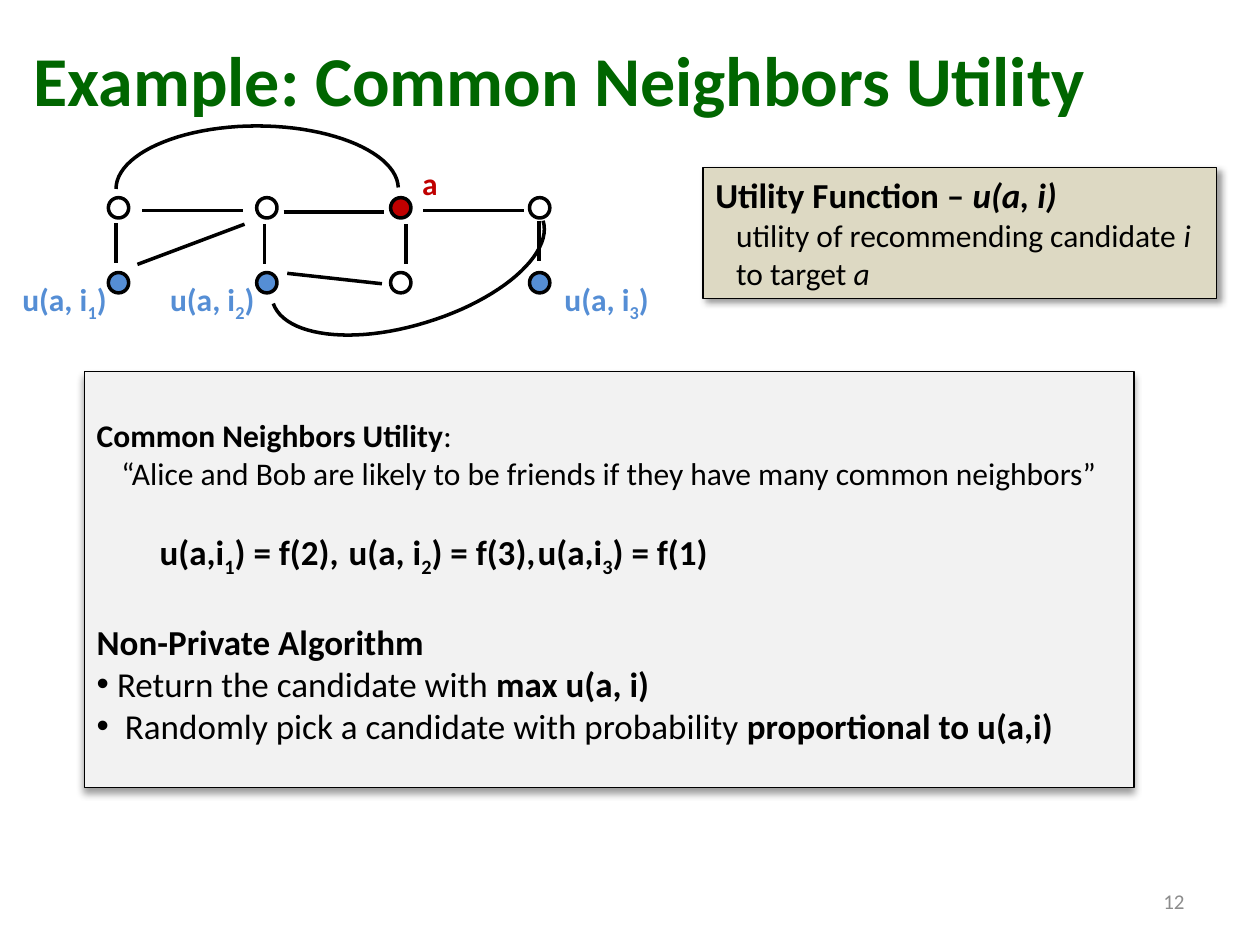
from dataclasses import dataclass

from lxml.etree import SubElement
from pptx import Presentation
from pptx.dml.color import RGBColor as RGB
from pptx.enum.shapes import MSO_CONNECTOR as CONNECTOR, MSO_SHAPE as SHAPE
from pptx.enum.text import MSO_ANCHOR as ANCHOR, PP_ALIGN as ALIGN
from pptx.oxml.ns import qn
from pptx.util import Cm, Pt


@dataclass(frozen=True)
class Theme:
    font: str = "Calibri"
    ink: str = "000000"
    title: str = "006600"
    target: str = "C00000"
    candidate: str = "558ED5"
    muted: str = "8C8C8C"
    tan: str = "DDD9C3"
    grey: str = "F2F2F2"
    title_size: int = 40
    large: int = 20
    body: int = 18
    small: int = 12
    edge: float = 2
    border: float = 0.75


class Board:
    """Holds the style and the current slide."""

    def __init__(self, slide, theme):
        self.shapes = slide.shapes
        self.theme = theme

    def outline(self, shape, width):
        shape.line.color.rgb = RGB.from_string(self.theme.ink)
        shape.line.width = Pt(width)

    def paint(self, shape, fill):
        shape.shadow.inherit = False
        if fill:
            shape.fill.solid()
            shape.fill.fore_color.rgb = RGB.from_string(fill)
        else:
            shape.fill.background()

    def runs(self, paragraph, parts, size, color=None):
        """Each part is text plus flags: b bold, i italic, _ subscript, / break."""
        for text, flags in parts:
            run = paragraph.add_run()
            run.text = text
            font = run.font
            font.name, font.size = self.theme.font, Pt(size)
            font.bold, font.italic = "b" in flags, "i" in flags
            font.color.rgb = RGB.from_string(color or self.theme.ink)
            if "_" in flags:
                run._r.get_or_add_rPr().set("baseline", "-25000")
            if "/" in flags:
                paragraph.add_line_break()

    def paragraph(self, frame, parts, size, align=ALIGN.LEFT, before=0,
                  indent=0, bullet=False, tabs=()):
        first = frame.paragraphs[0]
        para = frame.add_paragraph() if first.runs else first
        para.alignment = align
        para.space_before = Pt(before)
        props = para._p.get_or_add_pPr()
        props.set("marL", str(Cm(indent)))
        props.set("indent", str(-Cm(indent) if bullet else 0))
        if bullet:
            SubElement(props, qn("a:buFont"), typeface="Arial")
            SubElement(props, qn("a:buChar"), char="•")
        if tabs:
            stops = SubElement(props, qn("a:tabLst"))
            for stop in tabs:
                SubElement(stops, qn("a:tab"), pos=str(Cm(stop)), algn="l")
        self.runs(para, parts, size)

    def text(self, x, y, w, h, parts, size, color, align=ALIGN.LEFT,
             anchor=ANCHOR.TOP, wrap=False):
        frame = self.shapes.add_textbox(Cm(x), Cm(y), Cm(w), Cm(h)).text_frame
        frame.word_wrap = wrap
        frame.vertical_anchor = anchor
        frame.paragraphs[0].alignment = align
        self.runs(frame.paragraphs[0], parts, size, color)

    def panel(self, x, y, w, h, fill, shadow_angle):
        box = self.shapes.add_shape(SHAPE.RECTANGLE, Cm(x), Cm(y), Cm(w), Cm(h))
        self.paint(box, fill)
        self.outline(box, self.theme.border)
        effects = box._element.spPr.find(qn("a:effectLst"))
        shadow = SubElement(effects, qn("a:outerShdw"), blurRad=str(Pt(4)),
                            dist=str(Pt(3)), dir=str(shadow_angle * 60000),
                            algn="tl", rotWithShape="0")
        tint = SubElement(shadow, qn("a:srgbClr"), val=self.theme.ink)
        SubElement(tint, qn("a:alpha"), val="40000")
        frame = box.text_frame
        frame.word_wrap = True
        frame.vertical_anchor = ANCHOR.TOP
        return frame

    def node(self, x, y, fill, size=0.41):
        dot = self.shapes.add_shape(SHAPE.OVAL, Cm(x - size / 2),
                                    Cm(y - size / 2), Cm(size), Cm(size))
        self.paint(dot, fill)
        self.outline(dot, self.theme.edge)

    def edge(self, x1, y1, x2, y2):
        line = self.shapes.add_connector(CONNECTOR.STRAIGHT, Cm(x1), Cm(y1),
                                         Cm(x2), Cm(y2))
        self.outline(line, self.theme.edge)
        SubElement(line._element.spPr, qn("a:effectLst"))

    def curve(self, start, *beziers, steps=24):
        """Open curve through cubic pieces of (control, control, end)."""
        points, last = [], start
        for c1, c2, end in beziers:
            for step in range(1, steps + 1):
                t = step / steps
                s = 1 - t
                weights = (s ** 3, 3 * s * s * t, 3 * s * t * t, t ** 3)
                points.append(tuple(
                    Cm(sum(k * v for k, v in zip(weights, axis)))
                    for axis in zip(last, c1, c2, end)))
            last = end
        builder = self.shapes.build_freeform(Cm(start[0]), Cm(start[1]))
        builder.add_line_segments(points, close=False)
        arc = builder.convert_to_shape()
        self.paint(arc, None)
        self.outline(arc, self.theme.edge)


def draw_graph(board):
    theme = board.theme

    # Long curved edges
    board.curve((5.51, 6.12),
                ((5.74, 6.78), (7.11, 6.96), (8.59, 6.5)),
                ((10.08, 6.05), (11.15, 5.13), (10.95, 4.45)))
    board.curve((8.03, 3.78),
                ((8, 3.1), (6.73, 2.54), (5.18, 2.54)),
                ((3.61, 2.54), (2.34, 3.12), (2.34, 3.81)))

    # Straight edges: vertical, top row, then slanted
    for x, y in ((2.34, 4.5), (5.33, 4.52), (8.18, 4.52), (10.87, 4.45)):
        board.edge(x, y, x, y + 0.81)
    for x, y in ((2.87, 4.24), (5.72, 4.27), (8.53, 4.24)):
        board.edge(x, y, x + 2.03, y)
    board.edge(2.77, 5.33, 4.93, 4.52)
    board.edge(5.79, 5.51, 7.7, 5.72)

    # Nodes, row by row
    columns = (2.39, 5.38, 8.08, 10.88)
    blue = theme.candidate
    for y, fills in ((4.19, (None, None, theme.target, None)),
                     (5.7, (blue, blue, None, blue))):
        for x, fill in zip(columns, fills):
            board.node(x, y, fill)

    # Node labels
    for number, x in enumerate((0.2, 3.18, 11.13), start=1):
        board.text(x, 5.53, 2.26, 1.02,
                   [("u(a, i", "b"), (str(number), "b_"), (")", "b")],
                   theme.body, blue)
    board.text(8.26, 3.18, 0.84, 1.02, [("a", "b")], theme.body, theme.target)


def main():
    deck = Presentation()
    deck.slide_width, deck.slide_height = Cm(25.4), Cm(19.05)
    theme = Theme()
    board = Board(deck.slides.add_slide(deck.slide_layouts[6]), theme)

    # Title and page number
    board.text(0.43, 0, 24.33, 3.18, [("Example: Common Neighbors Utility", "b")],
               theme.title_size, theme.title, anchor=ANCHOR.MIDDLE, wrap=True)
    board.text(18.21, 17.65, 5.92, 1.02, [("12", "")], theme.small, theme.muted,
               ALIGN.RIGHT, ANCHOR.MIDDLE, wrap=True)

    draw_graph(board)

    # Utility function definition
    utility = board.panel(14.17, 3.38, 10.36, 2.64, theme.tan, 45)
    board.paragraph(utility, [("Utility Function – ", "b"), ("u(a, i)", "bi")],
                    theme.large)
    board.paragraph(utility, [("utility of recommending candidate ", ""),
                              ("i", "i/"), ("to target ", ""), ("a", "i")],
                    theme.body, indent=0.42)

    # Common neighbors and the algorithm
    details = board.panel(1.7, 7.49, 21.16, 8.38, theme.grey, 90)
    details.margin_top = Cm(0.9)
    board.paragraph(details, [("Common Neighbors Utility", "b"), (":", "")],
                    theme.body)
    board.paragraph(details, [("“Alice and Bob are likely to be friends if they "
                               "have many common neighbors”", "")],
                    theme.body, ALIGN.CENTER)
    board.paragraph(details, [("\tu(a,i", "b"), ("1", "b_"),
                              (") = f(2),\tu(a, i", "b"), ("2", "b_"),
                              (") = f(3),\tu(a,i", "b"), ("3", "b_"),
                              (") = f(1)", "b")],
                    theme.large, before=22, tabs=(3.96, 8.69, 13.11))
    board.paragraph(details, [("Non-Private Algorithm", "b")], theme.large,
                    before=24.4)
    board.paragraph(details, [("Return the candidate with ", ""),
                              ("max u(a, i)", "b")],
                    theme.large, indent=0.41, bullet=True)
    board.paragraph(details, [("Randomly pick a candidate with probability", ""),
                              (" proportional to u(a,i)", "b")],
                    theme.large, indent=0.57, bullet=True)

    deck.save("out.pptx")


if __name__ == "__main__":
    main()
